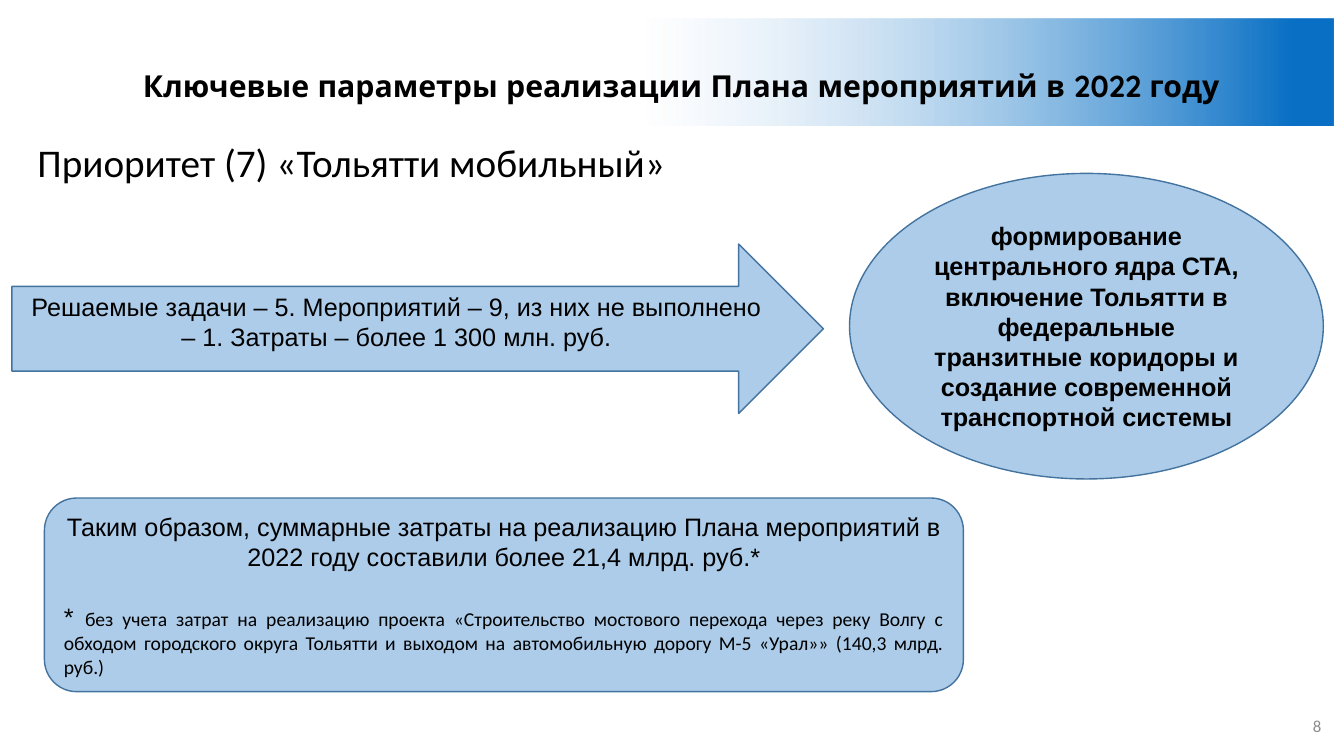
from lxml.etree import SubElement
from pptx import Presentation
from pptx.dml.color import RGBColor
from pptx.enum.shapes import MSO_SHAPE
from pptx.enum.text import MSO_ANCHOR, MSO_AUTO_SIZE, PP_ALIGN
from pptx.oxml.ns import qn
from pptx.util import Cm, Pt

BLACK, BLUE, EDGE = "000000", "5B9BD5", "43739E"


def paint(color, value):
    color.rgb = RGBColor.from_string(value)


def fade(node, percent):
    """Set the opacity of the RGB colour found under the node."""
    tone = next(node.iter(qn("a:srgbClr")))
    SubElement(tone, qn("a:alpha"), val=str(percent * 1000))


def place(shape, box):
    shape.left, shape.top, shape.width, shape.height = map(Cm, box)


def write(para, text, size, font="Arial", color=BLACK, bold=False):
    run = para.add_run()
    run.text = text
    run.font.size, run.font.name, run.font.bold = Pt(size), font, bold
    paint(run.font.color, color)


def add_banner(slide, box, text):
    title = slide.shapes.title
    place(title, box)
    title.fill.gradient()
    title.fill.gradient_angle = 0
    stops = title.fill.gradient_stops
    for stop, value, spot in zip(stops, ("FFFFFF", "086FC4"), (0.47, 0.97)):
        paint(stop.color, value)
        stop.position = spot
    fade(title.element.spPr, 33)
    frame = title.text_frame
    frame.auto_size, frame.word_wrap = MSO_AUTO_SIZE.NONE, True
    frame.vertical_anchor = MSO_ANCHOR.MIDDLE
    frame.margin_top, frame.margin_bottom = Cm(0.68), 0
    para = frame.paragraphs[0]
    para.alignment = PP_ALIGN.CENTER
    write(para, text, 21.6, "Quicksand", bold=True)


def add_topic(slide, box, text):
    body = slide.placeholders[1]
    place(body, box)
    frame = body.text_frame
    frame.auto_size = MSO_AUTO_SIZE.NONE
    frame.vertical_anchor = MSO_ANCHOR.TOP
    para = frame.paragraphs[0]
    para.line_spacing, para.space_before = 0.9, Pt(10)
    props = para._p.get_or_add_pPr()
    props.set("marL", "0")
    props.set("indent", "0")
    SubElement(props, qn("a:buNone"))
    write(para, text, 28, "Calibri")


def add_panel(slide, kind, box, text, anchor=MSO_ANCHOR.MIDDLE, bold=False):
    """Add a translucent blue shape with centred text and return its frame."""
    panel = slide.shapes.add_shape(kind, *map(Cm, box))
    panel.shadow.inherit = False
    panel.fill.solid()
    paint(panel.fill.fore_color, BLUE)
    fade(panel.element.spPr, 50)
    paint(panel.line.color, EDGE)
    panel.line.width = Pt(1)
    frame = panel.text_frame
    frame.word_wrap, frame.vertical_anchor = True, anchor
    para = frame.paragraphs[0]
    para.alignment = PP_ALIGN.CENTER
    write(para, text, 18, bold=bold)
    return frame


def add_total(slide, box, text, note):
    frame = add_panel(slide, MSO_SHAPE.ROUNDED_RECTANGLE, box, text)
    frame.paragraphs[0].space_after = Pt(21)
    para = frame.add_paragraph()
    para.alignment = PP_ALIGN.JUSTIFY
    write(para, "* ", 18)
    write(para, note, 14, "Calibri")


def add_number(slide, box, text):
    frame = slide.shapes.add_textbox(*map(Cm, box)).text_frame
    frame.word_wrap, frame.vertical_anchor = True, MSO_ANCHOR.MIDDLE
    para = frame.paragraphs[0]
    para.alignment = PP_ALIGN.RIGHT
    write(para, text, 12, "Calibri", "8C8C8C")


def main():
    deck = Presentation()
    deck.slide_width, deck.slide_height = Cm(33.87), Cm(19.05)
    slide = deck.slides.add_slide(deck.slide_layouts[1])
    add_banner(slide, (0.74, 0.46, 32.87, 2.69),
               "Ключевые параметры реализации Плана мероприятий в 2022 году")
    add_number(slide, (32.41, 17.78, 1.14, 1.02), "8")
    add_topic(slide, (0.69, 3.48, 32.87, 15.06),
              "Приоритет (7) «Тольятти мобильный»")
    add_panel(slide, MSO_SHAPE.RIGHT_ARROW, (0.3, 6.15, 20.45, 4.27),
              "Решаемые задачи – 5. Мероприятий – 9, из них не выполнено "
              "– 1. Затраты – более 1 300 млн. руб.", MSO_ANCHOR.TOP)
    add_panel(slide, MSO_SHAPE.OVAL, (21.41, 4.37, 11.94, 7.7),
              "формирование центрального ядра СТА, включение Тольятти в "
              "федеральные транзитные коридоры и создание современной "
              "транспортной системы", bold=True)
    add_total(slide, (1.12, 12.55, 23.16, 4.88),
              "Таким образом, суммарные затраты на реализацию Плана "
              "мероприятий в 2022 году составили более 21,4 млрд. руб.*",
              "без учета затрат на реализацию проекта «Строительство "
              "мостового перехода через реку Волгу с обходом городского "
              "округа Тольятти и выходом на автомобильную дорогу М-5 "
              "«Урал»» (140,3 млрд. руб.)")
    deck.save("out.pptx")


if __name__ == "__main__":
    main()
